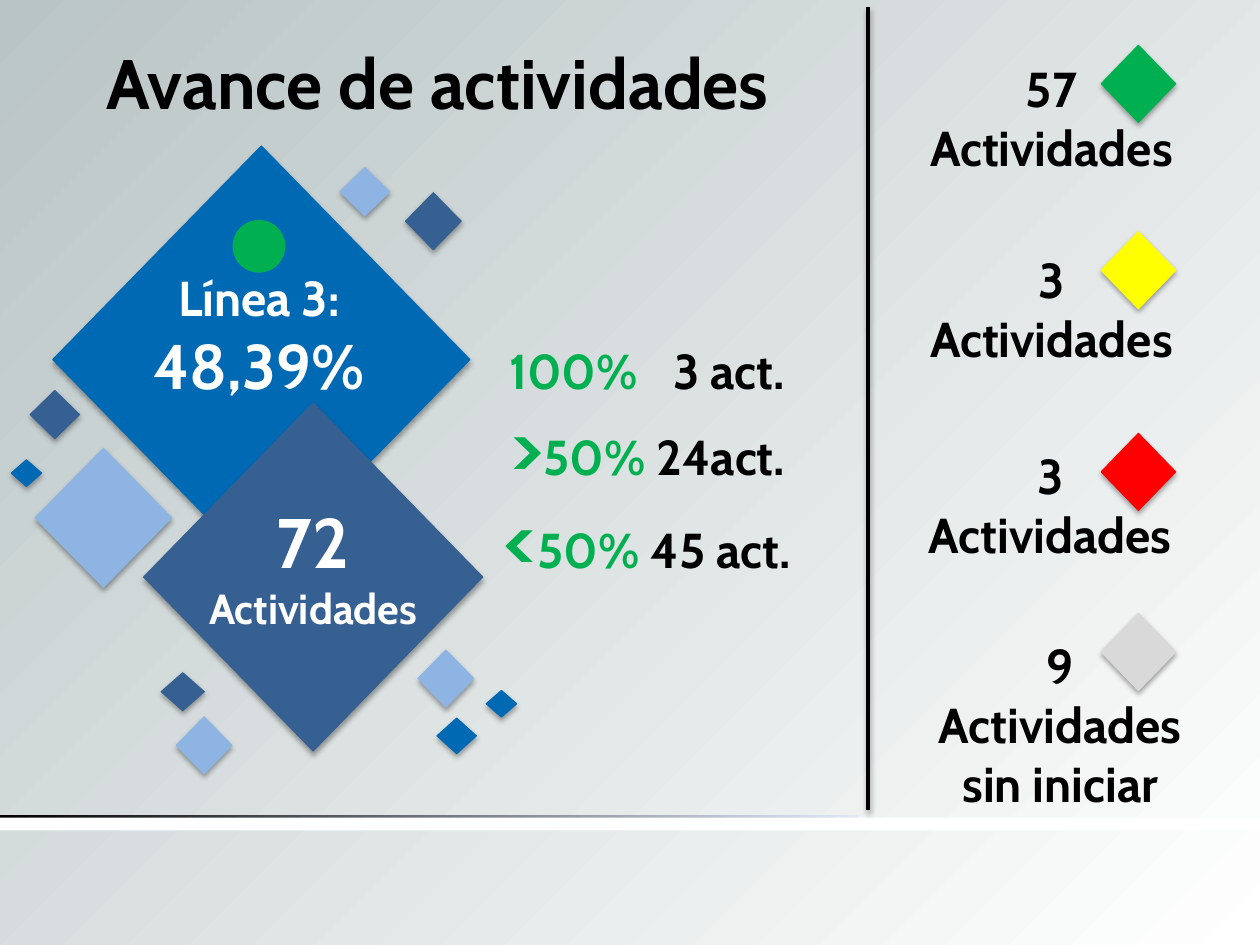
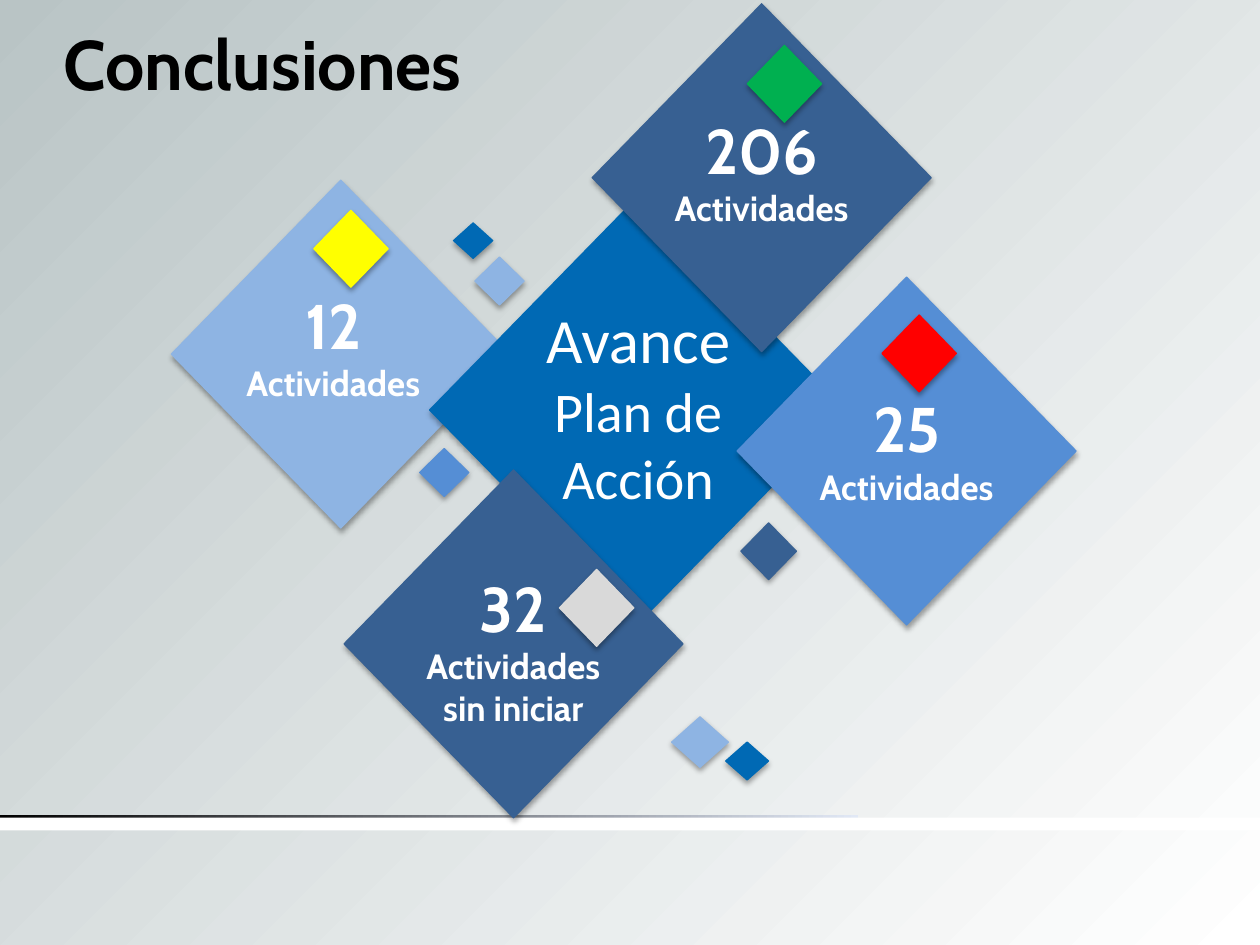
from pptx import Presentation
from pptx.dml.color import RGBColor
from pptx.enum.shapes import MSO_CONNECTOR, MSO_SHAPE as Preset
from pptx.enum.text import MSO_ANCHOR, MSO_AUTO_SIZE, PP_ALIGN
from pptx.oxml import parse_xml
from pptx.oxml.ns import nsdecls, qn
from pptx.util import Pt

BLACK = RGBColor(0, 0, 0)
WHITE = RGBColor(255, 255, 255)
MIST = RGBColor(0xB9, 0xC4, 0xC5)
PALE = RGBColor(0xE1, 0xE8, 0xF5)
BLUE = RGBColor(0x00, 0x69, 0xB4)
NAVY = RGBColor(0x37, 0x60, 0x92)
LIGHT = RGBColor(0x8E, 0xB4, 0xE3)
SKY = RGBColor(0x55, 0x8E, 0xD5)
GREEN = RGBColor(0x00, 0xB0, 0x50)
YELLOW = RGBColor(255, 255, 0)
RED = RGBColor(255, 0, 0)
GREY = RGBColor(0xD9, 0xD9, 0xD9)

# Diamond sizes: width, height
HUB = 238.3, 244
CARD = 193.7, 198.7
MARK = 42.5, 43.9
LARGE = 77.8, 79.2
MEDIUM = 31.7, 32.4
WIDE = 32.4, 28.8
SMALL = 28.1, 27.4
CHIP = 24.5, 21.6
BIT = 22.4, 20.2
TINY = 17.3, 15.1

# Text box sizes: width, height
TITLE = 441.4, 55.4
HUB_TEXT = 180.7, 85
HUB_TEXT_TALL = 180.7, 128.2
CARD_TEXT = 166.3, 85
COUNT = 166.3, 74.9
COUNT_THREE = 166.3, 99.4
COUNT_LAST = 166.3, 108.7
PROGRESS = 202.3, 147.6

WIDE_GAP = 14  # extra points after the space that separates two columns
MARK_LEFT = 629.3

# Diamonds: left, top, size, colour
# Texts: left, top, size, font, colour, paragraphs of (text, points[, colour[, spacing]])
ADVANCE = {
    "diamonds": [
        (30.2, 83.5, HUB, BLUE),
        (82.1, 230.4, CARD, NAVY),
        (194.4, 95.8, SMALL, LIGHT),
        (17.3, 223.2, SMALL, NAVY),
        (249.8, 410.4, BIT, BLUE),
        (6.5, 262.8, TINY, BLUE),
        (92.2, 384.5, CHIP, NAVY),
        (20.2, 256.3, LARGE, LIGHT),
        (231.8, 110.2, MEDIUM, NAVY),
        (239, 371.5, MEDIUM, LIGHT),
        (100.8, 409.7, MEDIUM, LIGHT),
        (277.9, 394.6, TINY, BLUE),
        (MARK_LEFT, 25.9, MARK, GREEN),
        (MARK_LEFT, 132.5, MARK, YELLOW),
        (MARK_LEFT, 247.7, MARK, RED),
        (MARK_LEFT, 350.6, MARK, GREY),
    ],
    "texts": [
        (29.5, 18.7, TITLE, "Cabin", BLACK, [[("Avance de actividades", 40)]]),
        (57.6, 149, HUB_TEXT, "Cabin", WHITE, [[("Línea 3:", 28)], [("48,39%", 36)]]),
        (95.8, 280.8, CARD_TEXT, "Cabin", WHITE, [[("72 ", 40), ("Actividades", 24)]]),
        (517.7, 29.5, COUNT, "Cabin", BLACK, [[("57 Actividades", 28)]]),
        (517.7, 139, COUNT, "Cabin", BLACK, [[("3 Actividades", 28)]]),
        (517, 250.6, COUNT, "Cabin", BLACK, [[("3", 28)], [("Actividades", 28)]]),
        (522.7, 359.3, COUNT_LAST, "Cabin", BLACK,
         [[("9", 28)], [("Actividades sin iniciar", 28)]]),
        (268.6, 190.1, PROGRESS, "Cabin", BLACK, [
            [("100%", 28, GREEN), (" ", 28, BLACK, WIDE_GAP), ("3 act.", 28)],
            [(">", 44, GREEN), ("50% ", 28, GREEN), ("24act.", 28)],
            [("<", 44, GREEN), ("50% ", 28, GREEN), ("45 act.", 28)],
        ]),
    ],
}

CONCLUSIONS = {
    "diamonds": [
        (97.9, 103, CARD, LIGHT),
        (245.5, 112.3, HUB, BLUE),
        (271.4, 146.9, SMALL, LIGHT),
        (239.8, 256.3, SMALL, SKY),
        (383.8, 409.7, WIDE, LIGHT),
        (423.4, 298.8, MEDIUM, NAVY),
        (259.2, 127.4, BIT, BLUE),
        (421.2, 158.4, CARD, SKY),
        (414.7, 424.1, CHIP, BLUE),
        (196.6, 268.6, CARD, NAVY),
        (338.4, 2.2, CARD, NAVY),
        (319.7, 325.4, MARK, GREY),
        (504, 180, MARK, RED),
        (427, 25.9, MARK, GREEN),
        (179.3, 120.2, MARK, YELLOW),
    ],
    "texts": [
        (-70.6, 7.9, TITLE, "Cabin", BLACK, [[("Conclusiones", 40)]]),
        (274.3, 167.8, HUB_TEXT_TALL, "Calibri", WHITE,
         [[("Avance", 36)], [("Plan de Acción", 32)]]),
        (210.2, 321.1, COUNT_THREE, "Cabin", WHITE,
         [[("32", 36)], [("Actividades", 20)], [("sin iniciar", 20)]]),
        (434.9, 218.9, COUNT, "Cabin", WHITE, [[("25", 36)], [("Actividades", 20)]]),
        (352.1, 59.8, COUNT, "Cabin", WHITE, [[("206 ", 36), ("Actividades", 20)]]),
        (107.3, 159.8, COUNT, "Cabin", WHITE, [[("12", 36)], [("Actividades", 20)]]),
    ],
}


def set_format(target, values):
    for name, value in values.items():
        setattr(target, name, value)


def set_gradient(fill, start, end):
    fill.gradient()
    for stop, position, colour in zip(fill.gradient_stops, (0, 1), (start, end)):
        stop.position = position
        stop.color.rgb = colour


def set_background(master):
    """Radial gradient that spreads from the bottom right corner."""
    set_gradient(master.background.fill, WHITE, MIST)
    gradient = master.element.find(".//" + qn("a:gradFill"))
    gradient.replace(gradient.find(qn("a:lin")), parse_xml(
        f'<a:path {nsdecls("a")} path="circle">'
        '<a:fillToRect l="100000" t="100000"/></a:path>'))


def add_shadow(item, alpha, distance):
    properties = item._element.spPr
    for effects in properties.findall(qn("a:effectLst")):
        properties.remove(effects)
    properties.append(parse_xml(
        f'<a:effectLst {nsdecls("a")}><a:outerShdw blurRad="{Pt(3.1)}" '
        f'dist="{Pt(distance)}" dir="5400000" rotWithShape="0"><a:srgbClr val="000000">'
        f'<a:alpha val="{alpha * 1000}"/></a:srgbClr></a:outerShdw></a:effectLst>'))


def add_preset(slide, preset, left, top, size, colour, outline=None):
    shape = slide.shapes.add_shape(preset, Pt(left), Pt(top), *map(Pt, size))
    shape.shadow.inherit = False
    shape.fill.solid()
    shape.fill.fore_color.rgb = colour
    if outline:
        shape.line.color.rgb = colour
        shape.line.width = Pt(outline)
    else:
        shape.line.fill.background()
    return shape


def add_text(slide, left, top, size, font_name, colour, paragraphs):
    frame = slide.shapes.add_textbox(Pt(left), Pt(top), *map(Pt, size)).text_frame
    set_format(frame, {
        "word_wrap": True,
        "auto_size": MSO_AUTO_SIZE.SHAPE_TO_FIT_TEXT,
        "vertical_anchor": MSO_ANCHOR.MIDDLE,
    })
    for index, pieces in enumerate(paragraphs):
        paragraph = frame.add_paragraph() if index else frame.paragraphs[0]
        paragraph.alignment = PP_ALIGN.CENTER
        for words, points, *extras in pieces:
            run = paragraph.add_run()
            run.text = words
            set_format(run.font, {
                "name": font_name, "size": Pt(points), "bold": font_name == "Cabin"})
            run.font.color.rgb = extras[0] if extras else colour
            if len(extras) > 1:
                run.font._element.set("spc", str(extras[1] * 100))


def add_content_slide(deck, content):
    slide = deck.slides.add_slide(deck.slide_layouts[6])
    rule = add_preset(slide, Preset.RECTANGLE, 0, 465.8, (490.3, 3.6), BLACK)
    set_gradient(rule.fill, BLACK, PALE)
    rule.fill.gradient_angle = 0
    add_preset(slide, Preset.RECTANGLE, 0, 467.3, (720, 7.2), WHITE)
    for diamond in content["diamonds"]:
        add_shadow(add_preset(slide, Preset.DIAMOND, *diamond, outline=0.75), 35, 1.8)
    for text in content["texts"]:
        add_text(slide, *text)
    return slide


def main():
    deck = Presentation()
    set_format(deck, {"slide_width": Pt(720), "slide_height": Pt(540)})
    set_background(deck.slide_master)

    advance = add_content_slide(deck, ADVANCE)
    add_preset(advance, Preset.OVAL, 133.9, 126.7, (28.1, 28.1), GREEN, outline=2)
    divider = advance.shapes.add_connector(
        MSO_CONNECTOR.STRAIGHT, Pt(496.1), Pt(4.3), Pt(496.1), Pt(463))
    divider.line.color.rgb = BLACK
    divider.line.width = Pt(2)
    add_shadow(divider, 38, 1.6)

    add_content_slide(deck, CONCLUSIONS)
    deck.save("out.pptx")


if __name__ == "__main__":
    main()
